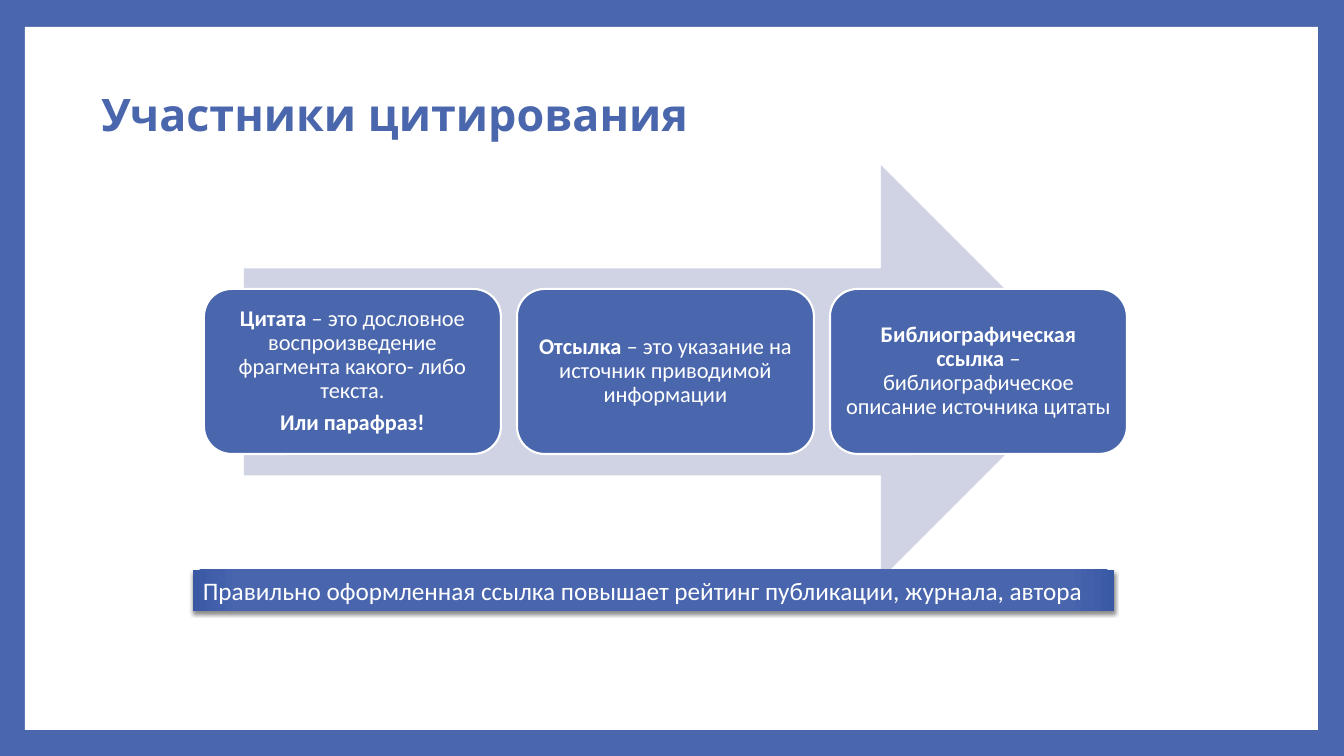
from dataclasses import dataclass

from pptx import Presentation
from pptx.dml.color import RGBColor
from pptx.enum.shapes import MSO_SHAPE
from pptx.enum.text import MSO_ANCHOR, MSO_AUTO_SIZE, PP_ALIGN
from pptx.oxml import parse_xml
from pptx.oxml.ns import nsdecls, qn
from pptx.util import Emu, Pt

RECT = MSO_SHAPE.RECTANGLE
ROUND = MSO_SHAPE.ROUNDED_RECTANGLE
ARROW = MSO_SHAPE.RIGHT_ARROW
MIDDLE = MSO_ANCHOR.MIDDLE
FIXED = MSO_AUTO_SIZE.NONE
LEFT, CENTER = PP_ALIGN.LEFT, PP_ALIGN.CENTER

WIDE, HIGH = 1344, 756
SCALE = 12192000 / WIDE
BLUE, WHITE, PALE = "4A66AC", "FFFFFF", "D0D3E3"
BODY, HEAD = "Calibri", "League Spartan"


@dataclass
class Span:
    text: str
    bold: bool = False


@dataclass
class Card:
    paras: list[list[Span]]


CARDS = [
    Card([[Span("Цитата", True),
           Span(" ‒ это дословное воспроизведение фрагмента какого- либо текста.")],
          [Span("Или парафраз!", True)]]),
    Card([[Span("Отсылка", True),
           Span(" ‒ это указание на источник приводимой информации")]]),
    Card([[Span("Библиографическая ссылка ", True),
           Span("‒ библиографическое описание источника цитаты")]]),
]


def px(num: int) -> Emu:
    return Emu(round(num * SCALE))


def tint(fill, color: str) -> None:
    fill.solid()
    fill.fore_color.rgb = RGBColor.from_string(color)


def place(shape, left: int, top: int, width: int, height: int) -> None:
    shape.left, shape.top = px(left), px(top)
    shape.width, shape.height = px(width), px(height)


def draw(slide, kind, box: tuple[int, int, int, int], color: str):
    shape = slide.shapes.add_shape(kind, *map(px, box))
    shape.shadow.inherit = False
    tint(shape.fill, color)
    shape.line.fill.background()
    return shape


def write(para, spans: list[Span], size: int, font: str, color: str, align) -> None:
    para.alignment = align
    for span in spans:
        run = para.add_run()
        run.text = span.text
        run.font.size = Pt(size)
        run.font.name = font
        run.font.bold = span.bold
        tint(run.font.fill, color)


def add_card(slide, card: Card, left: int) -> None:
    shape = draw(slide, ROUND, (left, 289, 297, 165), BLUE)
    tint(shape.line.fill, WHITE)
    shape.line.width = Pt(1.5)
    frame = shape.text_frame
    frame.word_wrap = True
    frame.vertical_anchor = MIDDLE
    frame.margin_left = frame.margin_right = px(7)
    frame.margin_top = frame.margin_bottom = px(7)
    for num, spans in enumerate(card.paras):
        para = frame.add_paragraph() if num else frame.paragraphs[0]
        para.line_spacing = 0.9
        para.space_after = Pt(5.6)
        write(para, spans, 16, BODY, WHITE, CENTER)


def add_glow(shape) -> None:
    """Give the shape a radial gradient and a soft shadow below."""
    stops = "".join(
        f'<a:gs pos="{pos * 1000}"><a:srgbClr val="{color}"/></a:gs>'
        for pos, color in [(0, BLUE), (90, "4865AE"), (100, "3A59A5")])
    props = shape.element.spPr
    props.replace(props.find(qn("a:solidFill")), parse_xml(
        f'<a:gradFill {nsdecls("a")} rotWithShape="1"><a:gsLst>{stops}</a:gsLst>'
        '<a:path path="circle"><a:fillToRect l="100000" t="100000" '
        'r="100000" b="100000"/></a:path></a:gradFill>'))
    props.find(qn("a:effectLst")).append(parse_xml(
        f'<a:outerShdw {nsdecls("a")} blurRad="{Pt(3)}" dist="{Pt(2)}" '
        'dir="5400000" rotWithShape="0"><a:srgbClr val="000000">'
        '<a:alpha val="45000"/></a:srgbClr></a:outerShdw>'))


def main() -> None:
    deck = Presentation()
    deck.slide_width, deck.slide_height = px(WIDE), px(HIGH)
    slide = deck.slides.add_slide(deck.slide_layouts[5])

    # Blue frame around a white page
    tint(slide.background.fill, BLUE)
    page = draw(slide, RECT, (25, 27, 1293, 703), WHITE)
    title = slide.shapes.title
    title.element.addprevious(page.element)

    # Title
    place(title, 91, 68, 1124, 98)
    frame = title.text_frame
    frame.auto_size = FIXED
    frame.word_wrap = True
    frame.vertical_anchor = MIDDLE
    frame.paragraphs[0].line_spacing = 0.9
    write(frame.paragraphs[0], [Span("Участники цитирования", True)],
          32, HEAD, BLUE, LEFT)

    # Arrow with the three cards
    draw(slide, ARROW, (244, 165, 844, 414), PALE)
    for num, card in enumerate(CARDS):
        add_card(slide, card, 204 + num * 313)

    # Closing bar
    bar = draw(slide, RECT, (193, 570, 921, 41), BLUE)
    add_glow(bar)
    bar.text_frame.word_wrap = True
    write(bar.text_frame.paragraphs[0],
          [Span("Правильно оформленная ссылка повышает рейтинг публикации, журнала, автора")],
          18, BODY, WHITE, LEFT)

    deck.save("out.pptx")


if __name__ == "__main__":
    main()
